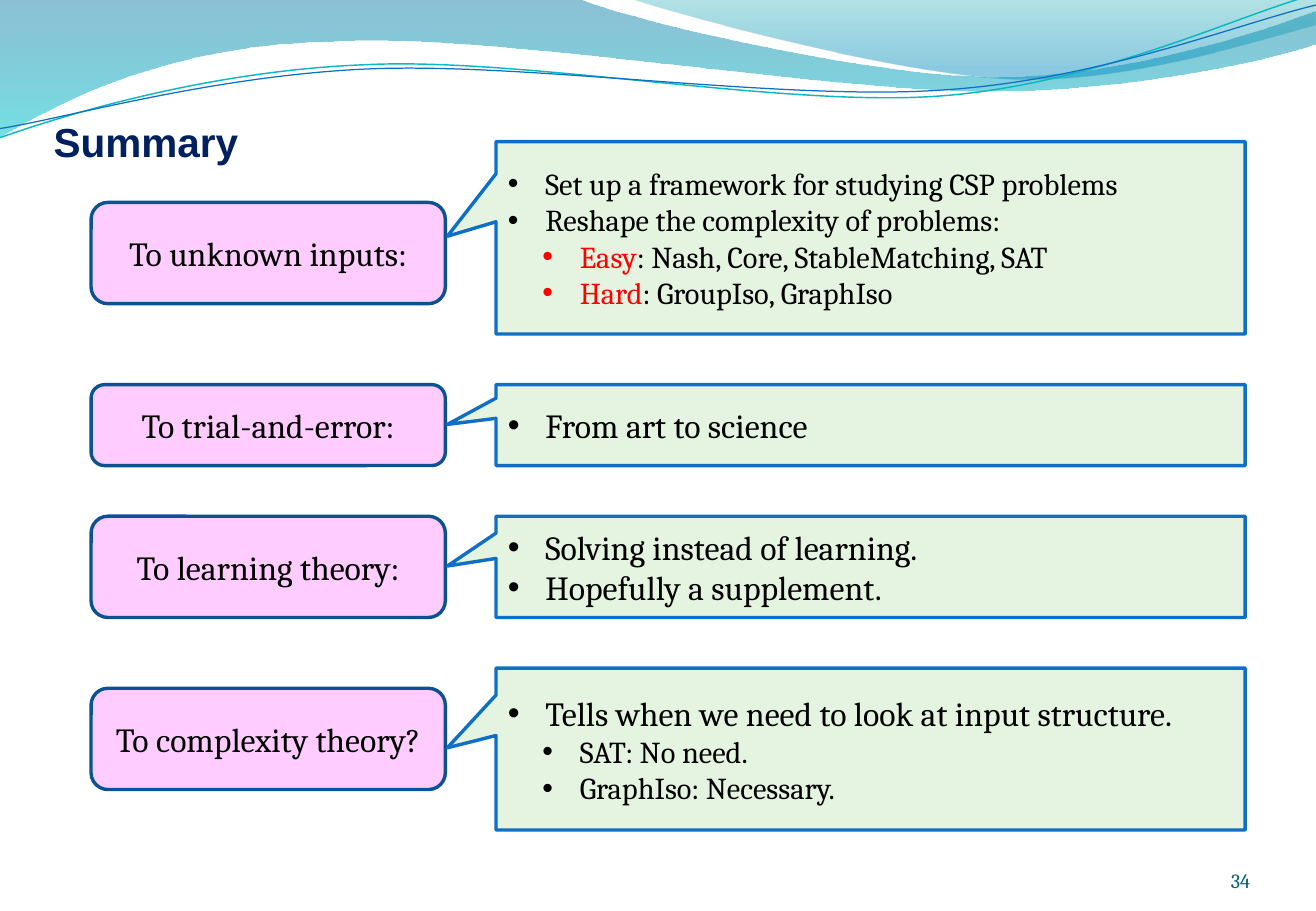
from lxml.etree import Element, SubElement
from pptx import Presentation
from pptx.dml.color import RGBColor
from pptx.enum.shapes import MSO_SHAPE
from pptx.enum.text import MSO_ANCHOR, PP_ALIGN
from pptx.oxml.ns import qn
from pptx.util import Pt

PX = 7620  # EMU per px, 120 px to the inch
WIDE, HIGH = 1300, 900

BLACK = RGBColor(0x00, 0x00, 0x00)
RED = RGBColor(0xFF, 0x00, 0x00)
NAVY = RGBColor(0x00, 0x20, 0x60)
PETROL = RGBColor(0x04, 0x5D, 0x75)
PINK = RGBColor(0xFF, 0xCC, 0xFF)
GREEN = RGBColor(0xE5, 0xF4, 0xE0)
BLUE = RGBColor(0x0F, 0x6F, 0xC6)
DEEP = RGBColor(0x0B, 0x52, 0x92)
TEAL = RGBColor(0x0A, 0xB8, 0xBF)
# Each tint: place, colour, opacity in percent
BACK = [(0, RGBColor(0x00, 0x74, 0xA1), 45),
        (1, RGBColor(0x00, 0xC6, 0xCF), 55)]
FRONT = [(0, RGBColor(0x00, 0xA1, 0xA9), 30),
         (0.8, RGBColor(0x00, 0x8B, 0xBF), 45)]

# Curves: a start point, then three points for each cubic piece
BACK_TOP = [(572, -1), (618, 20), (863, 76), (986, 76),
            (1109, 76), (1246, 31), (1300, 11)]
BACK_LOW = [(1301, 43), (1278, 53), (1130, 91), (970, 90),
            (809, 90), (497, 34), (335, 41),
            (168, 43), (60, 100), (-1, 136)]
FRONT_LOW = [(623, -1), (662, 13), (887, 74), (1000, 78),
             (1112, 83), (1250, 38), (1300, 25)]
TEAL_LINE = [(0, 136), (62, 114), (205, 70), (360, 64),
             (514, 56), (770, 106), (926, 95),
             (1082, 84), (1220, 16), (1297, -5)]
BLUE_LINE = [(0, 127), (61, 118), (212, 74), (368, 68),
             (523, 62), (776, 100), (931, 89),
             (1087, 79), (1224, 23), (1300, 5)]

# Rows: top, callout height, tag drop, tag height, tag text, bullets
# Bullets: level, size, runs of text and colour
ROWS = [
    (140, 190, 60, 100, "To unknown inputs:", [
        (0, 18, [("Set up a framework for studying CSP problems", BLACK)]),
        (0, 18, [("Reshape the complexity of problems:", BLACK)]),
        (1, 18, [("Easy", RED),
                 (": Nash, Core, StableMatching, SAT", BLACK)]),
        (1, 18, [("Hard", RED), (": GroupIso, GraphIso", BLACK)])]),
    (380, 80, 0, 80, "To trial-and-error:", [
        (0, 20, [("From art to science", BLACK)])]),
    (510, 100, 0, 100, "To learning theory:", [
        (0, 20, [("Solving instead of learning.", BLACK)]),
        (0, 20, [("Hopefully a supplement.", BLACK)])]),
    (660, 160, 20, 100, "To complexity theory?", [
        (0, 20, [("Tells when we need to look at input structure.", BLACK)]),
        (1, 18, [("SAT: No need.", BLACK)]),
        (1, 18, [("GraphIso: Necessary.", BLACK)])]),
]


def scale(*box):
    return [n * PX for n in box]


def add_run(para, text, size, color, font="Cambria", bold=False):
    run = para.add_run()
    run.text = text
    run.font.size = Pt(size)
    run.font.name = font
    run.font.bold = bold
    run.font.color.rgb = color


def draw(slide, curves, close):
    """Draw curves, each joined to the next by a straight side."""
    dots = [dot for curve in curves for dot in curve]
    pen = slide.shapes.build_freeform(*dots[0], scale=PX)
    pen.add_line_segments(dots[1:], close=close)
    shape = pen.convert_to_shape()
    shape.shadow.inherit = False
    # Turn every three sides of a curve into one cubic piece
    sides = list(shape.element.iter(qn("a:lnTo")))
    start = 0
    for curve in curves:
        end = start + len(curve) - 1
        for i in range(start, end, 3):
            cubic = Element(qn("a:cubicBezTo"))
            sides[i].addprevious(cubic)
            for side in sides[i:i + 3]:
                cubic.append(side[0])
                side.getparent().remove(side)
        start = end + 1
    return shape


def add_wave(slide, curves, tints):
    shape = draw(slide, curves, True)
    shape.line.fill.background()
    shape.fill.gradient()
    shape.fill.gradient_angle = 270
    for stop, (place, color, alpha) in zip(shape.fill.gradient_stops, tints):
        stop.position = place
        stop.color.rgb = color
    for tone, tint in zip(shape.element.spPr.iter(qn("a:srgbClr")), tints):
        SubElement(tone, qn("a:alpha")).set("val", str(tint[2] * 1000))


def add_waves(slide):
    add_wave(slide, [[(0, 0)], BACK_TOP, BACK_LOW], BACK)
    add_wave(slide, [FRONT_LOW, [(WIDE, 0)]], FRONT)
    for curve, color, width in ((TEAL_LINE, TEAL, 0.85),
                                (BLUE_LINE, BLUE, 0.75)):
        line = draw(slide, [curve], False)
        line.fill.background()
        line.line.color.rgb = color
        line.line.width = Pt(width)


def add_title(slide, box):
    title = slide.shapes.title
    title.left, title.top, title.width, title.height = scale(*box)
    title.text_frame.vertical_anchor = MSO_ANCHOR.TOP
    para = title.text_frame.paragraphs[0]
    para.alignment = PP_ALIGN.LEFT
    para.line_spacing = 0.9
    add_run(para, "Summary", 24, NAVY, "Arial", True)


def add_box(slide, kind, box, fill, line):
    shape = slide.shapes.add_shape(kind, *scale(*box))
    shape.shadow.inherit = False
    shape.fill.solid()
    shape.fill.fore_color.rgb = fill
    shape.line.color.rgb = line
    shape.line.width = Pt(2)
    shape.text_frame.word_wrap = True
    shape.text_frame.vertical_anchor = MSO_ANCHOR.MIDDLE
    return shape


def add_bullet(para, level, size, runs):
    para.alignment = PP_ALIGN.LEFT
    para.level = level
    props = para._p.get_or_add_pPr()
    props.set("marL", str((37 + 34 * level) * PX))
    props.set("indent", str(-37 * PX))
    SubElement(props, qn("a:buFont")).set("typeface", "Arial")
    SubElement(props, qn("a:buChar")).set("char", "•")
    for text, color in runs:
        add_run(para, text, size, color)


def add_row(slide, box, drop, tall, label, items):
    left, top, wide, high = box
    # Tag
    tag = add_box(slide, MSO_SHAPE.ROUNDED_RECTANGLE,
                  (left, top + drop, 350, tall), PINK, DEEP)
    para = tag.text_frame.paragraphs[0]
    para.alignment = PP_ALIGN.CENTER
    add_run(para, label, 20, BLACK)
    # Callout
    note = add_box(slide, MSO_SHAPE.RECTANGULAR_CALLOUT,
                   (left + 400, top, wide - 400, high), GREEN, BLUE)
    note.adjustments[0] = -0.565
    note.adjustments[1] = -0.008
    frame = note.text_frame
    for i, item in enumerate(items):
        para = frame.add_paragraph() if i else frame.paragraphs[0]
        add_bullet(para, *item)


def add_number(slide, box):
    frame = slide.shapes.add_textbox(*scale(*box)).text_frame
    frame.word_wrap = True
    frame.margin_left = frame.margin_right = 0
    frame.margin_top = frame.margin_bottom = 0
    frame.vertical_anchor = MSO_ANCHOR.BOTTOM
    para = frame.paragraphs[0]
    para.alignment = PP_ALIGN.RIGHT
    add_run(para, "34", 12, PETROL)


def main():
    deck = Presentation()
    deck.slide_width, deck.slide_height = scale(WIDE, HIGH)
    slide = deck.slides.add_slide(deck.slide_layouts[5])
    add_waves(slide)
    add_number(slide, (1127, 834, 108, 48))
    add_title(slide, (41, 115, 1218, 85))
    for top, high, *rest in ROWS:
        add_row(slide, (90, top, 1140, high), *rest)
    deck.save("out.pptx")


if __name__ == "__main__":
    main()
